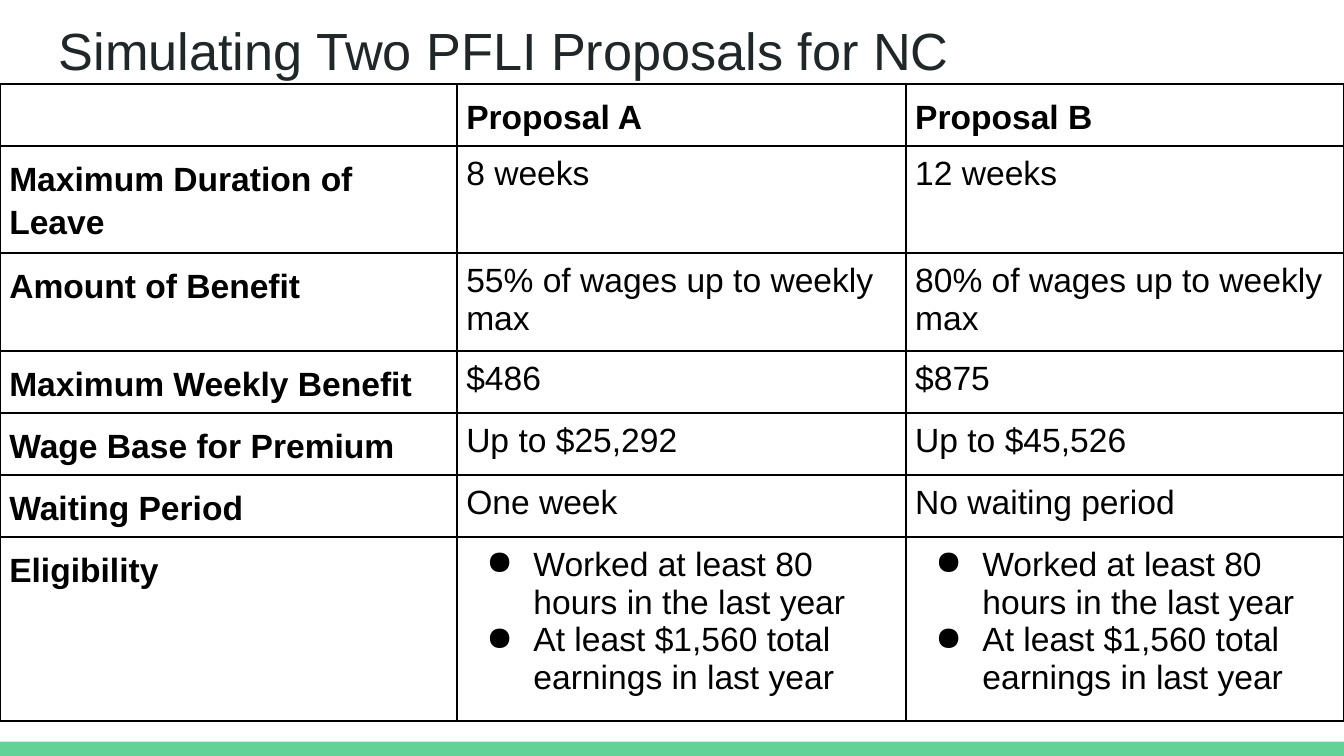
from dataclasses import dataclass

from lxml.etree import SubElement
from pptx import Presentation
from pptx.dml.color import RGBColor
from pptx.enum.shapes import MSO_SHAPE
from pptx.enum.text import MSO_ANCHOR
from pptx.oxml.ns import qn
from pptx.util import Pt


@dataclass(frozen=True)
class Theme:
    font: str = "Arial"
    title_size: int = 28
    table_size: int = 18
    title_color: str = "202729"
    text_color: str = "000000"
    border_color: str = "000000"
    footer_color: str = "63D297"


THEME = Theme()
SLIDE_WIDTH, SLIDE_HEIGHT = 720, 405
FOOTER_HEIGHT = 7.6
TABLE_TOP = 45
COLUMN_WIDTHS = [244.8, 240.5, 234.7]
ROW_HEIGHTS = [33.2, 57.3, 52.5, 33.2, 33.2, 33.2, 98.6]
CELL_INSET = 5
LABEL_SPACING = 1.15
BULLET_INDENT, BULLET_HANGING = 36, -25.2

ELIGIBILITY = [
    "Worked at least 80 hours in the last year",
    "At least $1,560 total earnings in last year",
]
PROPOSALS = [
    ["", "Proposal A", "Proposal B"],
    ["Maximum Duration of Leave", "8 weeks", "12 weeks"],
    ["Amount of Benefit", "55% of wages up to weekly max", "80% of wages up to weekly max"],
    ["Maximum Weekly Benefit", "$486", "$875"],
    ["Wage Base for Premium", "Up to $25,292", "Up to $45,526"],
    ["Waiting Period", "One week", "No waiting period"],
    ["Eligibility", ELIGIBILITY, ELIGIBILITY],
]


def set_attributes(target, values):
    for name, value in values.items():
        setattr(target, name, value)


def format_font(font, size, color, bold=False):
    set_attributes(font, {"name": THEME.font, "size": Pt(size), "bold": bold})
    font.color.rgb = RGBColor.from_string(color)


def add_title(slide, text):
    title = slide.shapes.add_textbox(Pt(24.5), Pt(0), Pt(671), Pt(TABLE_TOP))
    frame = title.text_frame
    set_attributes(frame, {
        "word_wrap": True, "vertical_anchor": MSO_ANCHOR.TOP,
        "margin_left": Pt(7.2), "margin_right": Pt(7.2),
        "margin_top": Pt(10), "margin_bottom": Pt(0),
    })
    heading = frame.paragraphs[0].add_run()
    heading.text = text
    format_font(heading.font, THEME.title_size, THEME.title_color)


def add_footer(slide):
    footer = slide.shapes.add_shape(
        MSO_SHAPE.RECTANGLE, Pt(0), Pt(SLIDE_HEIGHT - FOOTER_HEIGHT),
        Pt(SLIDE_WIDTH), Pt(FOOTER_HEIGHT))
    footer.shadow.inherit = False
    footer.fill.solid()
    footer.fill.fore_color.rgb = RGBColor.from_string(THEME.footer_color)
    footer.line.fill.background()


def add_borders(cell):
    properties = cell._tc.get_or_add_tcPr()
    for side in ("lnL", "lnR", "lnT", "lnB"):
        border = SubElement(properties, qn(f"a:{side}"), w=str(Pt(1)))
        fill = SubElement(border, qn("a:solidFill"))
        SubElement(fill, qn("a:srgbClr"), val=THEME.border_color)


def add_bullet(paragraph):
    properties = paragraph._p.get_or_add_pPr()
    properties.set("marL", str(Pt(BULLET_INDENT)))
    properties.set("indent", str(Pt(BULLET_HANGING)))
    color = SubElement(properties, qn("a:buClr"))
    SubElement(color, qn("a:srgbClr"), val=THEME.text_color)
    SubElement(properties, qn("a:buChar"), char="●")


def fill_cell(cell, content, is_label):
    """Write one text, or a list of texts as bullets."""
    bulleted = isinstance(content, list)
    margins = ("margin_left", "margin_right", "margin_top", "margin_bottom")
    set_attributes(cell, dict.fromkeys(margins, Pt(CELL_INSET)))
    add_borders(cell)
    cell.fill.background()
    cell.text = "\n".join(content) if bulleted else content
    for paragraph in cell.text_frame.paragraphs:
        if is_label:
            paragraph.line_spacing = LABEL_SPACING
        if bulleted:
            add_bullet(paragraph)
        for run in paragraph.runs:
            format_font(run.font, THEME.table_size, THEME.text_color, is_label)


def add_proposal_table(slide):
    table = slide.shapes.add_table(
        len(PROPOSALS), len(COLUMN_WIDTHS), Pt(0), Pt(TABLE_TOP),
        Pt(SLIDE_WIDTH), Pt(sum(ROW_HEIGHTS))).table
    set_attributes(table, {"first_row": False, "horz_banding": False})
    for column, width in zip(table.columns, COLUMN_WIDTHS):
        column.width = Pt(width)
    for row, height in zip(table.rows, ROW_HEIGHTS):
        row.height = Pt(height)
    for r, contents in enumerate(PROPOSALS):
        for c, content in enumerate(contents):
            fill_cell(table.cell(r, c), content, is_label=r == 0 or c == 0)


def main():
    presentation = Presentation()
    set_attributes(presentation, {
        "slide_width": Pt(SLIDE_WIDTH), "slide_height": Pt(SLIDE_HEIGHT)})
    slide = presentation.slides.add_slide(presentation.slide_layouts[6])
    add_footer(slide)
    add_proposal_table(slide)
    add_title(slide, "Simulating Two PFLI Proposals for NC")
    presentation.save("out.pptx")


if __name__ == "__main__":
    main()
